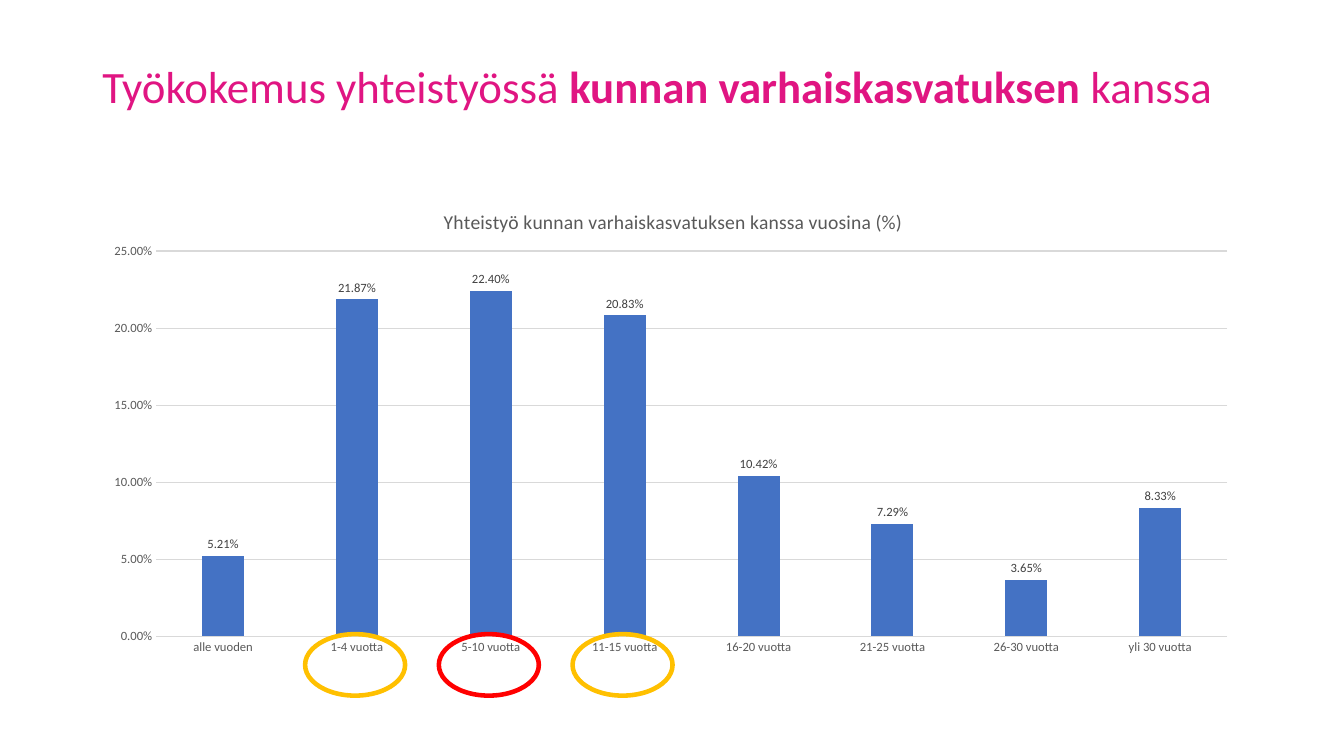
"""Build a slide with a column chart of years of cooperation with municipal early education."""
from pptx import Presentation
from pptx.chart.data import CategoryChartData
from pptx.dml.color import RGBColor
from pptx.enum.chart import XL_CHART_TYPE, XL_LABEL_POSITION, XL_TICK_MARK
from pptx.enum.shapes import MSO_SHAPE
from pptx.enum.text import MSO_ANCHOR
from pptx.oxml import parse_xml
from pptx.oxml.ns import nsdecls, qn
from pptx.util import Cm, Pt

COLUMNS = XL_CHART_TYPE.COLUMN_CLUSTERED
OUTSIDE_END = XL_LABEL_POSITION.OUTSIDE_END
NO_TICK = XL_TICK_MARK.NONE
ELLIPSE = MSO_SHAPE.OVAL
MIDDLE = MSO_ANCHOR.MIDDLE

PINK = RGBColor(0xE0, 0x15, 0x82)
BLUE = RGBColor(0x44, 0x72, 0xC4)
AMBER = RGBColor(0xFF, 0xC0, 0x00)
RED = RGBColor(0xFF, 0x00, 0x00)
BLACK = RGBColor(0x00, 0x00, 0x00)
DARK_GREY = RGBColor(0x40, 0x40, 0x40)
GREY = RGBColor(0x59, 0x59, 0x59)
PALE_GREY = RGBColor(0xD9, 0xD9, 0xD9)

FONT = "Calibri"
PERCENT = "0.00%"

TITLE = [
    ("Työkokemus yhteistyössä ", False),
    ("kunnan varhaiskasvatuksen ", True),
    ("kanssa", False),
]
CHART_TITLE = "Yhteistyö kunnan varhaiskasvatuksen kanssa vuosina (%)"
EXPERIENCE = {
    "alle vuoden": 0.0521,
    "1-4 vuotta": 0.2187,
    "5-10 vuotta": 0.224,
    "11-15 vuotta": 0.2083,
    "16-20 vuotta": 0.1042,
    "21-25 vuotta": 0.0729,
    "26-30 vuotta": 0.0365,
    "yli 30 vuotta": 0.0833,
}
RING_COLORS = [AMBER, RED, AMBER]

MARGIN, CONTENT_WIDTH = 2.33, 29.21
RING_LEFT, RING_TOP, RING_STEP = 7.69, 15.98, 3.37
RING_WIDTH, RING_HEIGHT = 2.52, 1.55


def style_font(font, size, color, bold=False):
    font.name = FONT
    font.size = Pt(size)
    font.bold = bold
    font.color.rgb = color


def place(parent, index, target="", **fractions):
    """Give a chart part a manual layout in fractions of the chart."""
    for layout in parent.findall(qn("c:layout")):
        parent.remove(layout)
    modes = "".join(f'<c:{side}Mode val="edge"/>' for side in "xy")
    sizes = "".join(f'<c:{name} val="{value}"/>' for name, value in fractions.items())
    parent.insert(index, parse_xml(
        f'<c:layout {nsdecls("c")}><c:manualLayout>{target}{modes}{sizes}'
        "</c:manualLayout></c:layout>"))


def add_title(page):
    box = page.shapes.add_textbox(Cm(MARGIN), Cm(1.02), Cm(CONTENT_WIDTH), Cm(2.46))
    frame = box.text_frame
    frame.word_wrap = True
    frame.vertical_anchor = MIDDLE
    para = frame.paragraphs[0]
    para.line_spacing = 0.9
    for text, bold in TITLE:
        span = para.add_run()
        span.text = text
        style_font(span.font, 32, PINK, bold)


def add_experience_chart(page):
    data = CategoryChartData(number_format=PERCENT)
    data.categories = list(EXPERIENCE)
    data.add_series("Series 1", list(EXPERIENCE.values()))
    chart = page.shapes.add_chart(
        COLUMNS, Cm(MARGIN), Cm(4.67), Cm(CONTENT_WIDTH), Cm(12.09), data).chart
    style_font(chart.font, 10, BLACK)
    chart.has_legend = False

    chart.has_title = True
    span = chart.chart_title.text_frame.paragraphs[0].add_run()
    span.text = CHART_TITLE
    style_font(span.font, 14, GREY)
    chart.chart_title.include_in_layout = False
    place(chart.chart_title.element, 1, x=0.3, y=0.04)
    plot_area = chart.element.find(".//" + qn("c:plotArea"))
    place(plot_area, 0, '<c:layoutTarget val="inner"/>', x=0.055, y=0.137, w=0.924, h=0.803)

    for axis in (chart.category_axis, chart.value_axis):
        axis.major_tick_mark = axis.minor_tick_mark = NO_TICK
        style_font(axis.tick_labels.font, 9, GREY)
    values = chart.value_axis
    values.minimum_scale, values.maximum_scale, values.major_unit = 0, 0.25, 0.05
    values.tick_labels.number_format = PERCENT
    values.tick_labels.number_format_is_linked = False
    values.format.line.fill.background()
    for line in (chart.category_axis.format.line, values.major_gridlines.format.line):
        line.color.rgb = PALE_GREY
        line.width = Pt(0.75)

    plot = chart.plots[0]
    plot.gap_width, plot.overlap = 219, -27
    plot.vary_by_categories = False
    series = plot.series[0]
    series.format.fill.solid()
    series.format.fill.fore_color.rgb = BLUE
    labels = series.data_labels
    labels.show_value = True
    labels.position = OUTSIDE_END
    labels.number_format = PERCENT
    labels.number_format_is_linked = False
    style_font(labels.font, 9, DARK_GREY)


def add_rings(page):
    for index, color in enumerate(RING_COLORS):
        ring = page.shapes.add_shape(
            ELLIPSE, Cm(RING_LEFT + index * RING_STEP), Cm(RING_TOP),
            Cm(RING_WIDTH), Cm(RING_HEIGHT))
        ring.shadow.inherit = False
        ring.fill.background()
        ring.line.color.rgb = color
        ring.line.width = Pt(3.25)


def main():
    deck = Presentation()
    deck.slide_width, deck.slide_height = Cm(33.87), Cm(19.05)
    page = deck.slides.add_slide(deck.slide_layouts[6])
    add_title(page)
    add_experience_chart(page)
    add_rings(page)
    deck.save("out.pptx")


if __name__ == "__main__":
    main()
